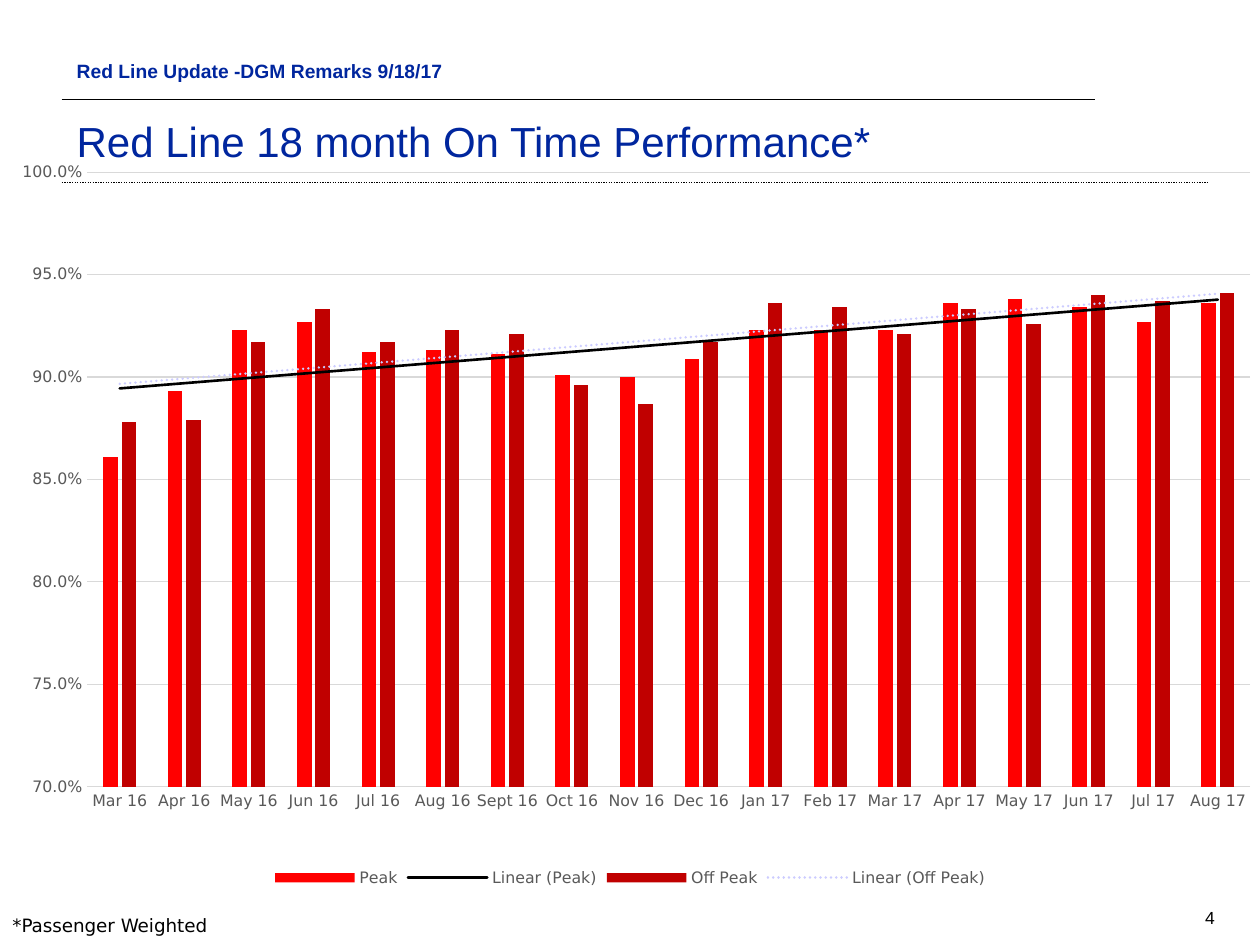
from lxml import etree
from pptx import Presentation
from pptx.chart.data import CategoryChartData
from pptx.dml.color import RGBColor
from pptx.enum import chart as ch, dml, shapes, text
from pptx.oxml import parse_xml
from pptx.oxml.ns import nsdecls, qn
from pptx.util import Inches, Pt

BLACK = RGBColor(0x00, 0x00, 0x00)
NAVY = RGBColor(0x00, 0x26, 0x9E)
GRAY = RGBColor(0x59, 0x59, 0x59)
GRID = RGBColor(0xD9, 0xD9, 0xD9)
RED = RGBColor(0xFF, 0x00, 0x00)
DARK_RED = RGBColor(0xC0, 0x00, 0x00)
LAVENDER = RGBColor(0xCC, 0xCC, 0xFF)

MONTHS = ["Mar 16", "Apr 16", "May 16", "Jun 16", "Jul 16", "Aug 16",
          "Sept 16", "Oct 16", "Nov 16", "Dec 16", "Jan 17", "Feb 17",
          "Mar 17", "Apr 17", "May 17", "Jun 17", "Jul 17", "Aug 17"]
PEAK = [0.861, 0.893, 0.923, 0.927, 0.912, 0.913, 0.911, 0.901, 0.9,
        0.909, 0.923, 0.923, 0.923, 0.936, 0.938, 0.934, 0.927, 0.936]
OFF_PEAK = [0.878, 0.879, 0.917, 0.933, 0.917, 0.923, 0.921, 0.896, 0.887,
            0.917, 0.936, 0.934, 0.921, 0.933, 0.926, 0.94, 0.937, 0.941]
# name, values, bar colour, trend colour, trend dash
SERIES = [("Peak", PEAK, RED, BLACK, "solid"),
          ("Off Peak", OFF_PEAK, DARK_RED, LAVENDER, "sysDot")]


def set_font(font, size, color, name="DejaVu Sans", bold=False):
    font.size, font.name, font.bold = Pt(size), name, bold
    font.color.rgb = color


def add_text(page, box, words, size, color, name="Arial", bold=False,
             align=text.PP_ALIGN.LEFT, anchor=text.MSO_ANCHOR.TOP):
    frame = page.shapes.add_textbox(*map(Inches, box)).text_frame
    frame.word_wrap = True
    frame.vertical_anchor = anchor
    para = frame.paragraphs[0]
    para.text = words
    para.alignment = align
    set_font(para.font, size, color, name, bold)


def add_rule(page, left, right, top, width, dash=None):
    rule = page.shapes.add_connector(
        shapes.MSO_CONNECTOR.STRAIGHT,
        Inches(left), Inches(top), Inches(right), Inches(top))
    rule.line.color.rgb = BLACK
    rule.line.width = Pt(width)
    if dash:
        rule.line.dash_style = dash
    etree.SubElement(rule._element.spPr, qn("a:effectLst"))


def add_trend(series, color, dash):
    trend = parse_xml(
        f'<c:trendline {nsdecls("c", "a")}><c:spPr><a:ln w="{Pt(1.5)}" cap="rnd">'
        f'<a:solidFill><a:srgbClr val="{color}"/></a:solidFill>'
        f'<a:prstDash val="{dash}"/></a:ln></c:spPr>'
        '<c:trendlineType val="linear"/><c:dispRSqr val="0"/>'
        '<c:dispEq val="0"/></c:trendline>')
    series._element.find(qn("c:cat")).addprevious(trend)


def set_plot_area(chart, left, top, width, height):
    """Fix the inner plot area, in fractions of the chart."""
    area = chart._chartSpace.chart.plotArea
    for old in area.findall(qn("c:layout")):
        area.remove(old)
    sizes = "".join(f'<c:{tag} val="{value}"/>' for tag, value in
                    zip("xywh", (left, top, width, height)))
    area.insert(0, parse_xml(
        f'<c:layout {nsdecls("c")}><c:manualLayout><c:layoutTarget val="inner"/>'
        '<c:xMode val="edge"/><c:yMode val="edge"/>'
        f'{sizes}</c:manualLayout></c:layout>'))


def style_axes(chart):
    months, rate = chart.category_axis, chart.value_axis
    for axis in (months, rate):
        axis.major_tick_mark = axis.minor_tick_mark = ch.XL_TICK_MARK.NONE
        set_font(axis.tick_labels.font, 9, GRAY)
    rate.minimum_scale, rate.maximum_scale, rate.major_unit = 0.7, 1, 0.05
    rate.tick_labels.number_format = "0.0%"
    rate.tick_labels.number_format_is_linked = False
    rate.format.line.fill.background()
    for line in (months.format.line, rate.major_gridlines.format.line):
        line.color.rgb = GRID
        line.width = Pt(0.75)


def add_performance_chart(page, box):
    data = CategoryChartData(number_format="0.0%")
    data.categories = MONTHS
    for name, values, *_ in SERIES:
        data.add_series(name, values)
    chart = page.shapes.add_chart(
        ch.XL_CHART_TYPE.COLUMN_CLUSTERED, *map(Inches, box), data).chart
    chart.has_title = False
    set_font(chart.font, 10, BLACK)

    plot = chart.plots[0]
    plot.vary_by_categories = False
    plot.gap_width, plot.overlap = 219, -27
    for series, (_, _, color, trend_color, dash) in zip(plot.series, SERIES):
        series.format.fill.solid()
        series.format.fill.fore_color.rgb = color
        add_trend(series, trend_color, dash)

    style_axes(chart)
    set_plot_area(chart, 0.102, 0.015, 0.853, 0.841)
    chart.has_legend = True
    chart.legend.position = ch.XL_LEGEND_POSITION.BOTTOM
    chart.legend.include_in_layout = False
    set_font(chart.legend.font, 9, GRAY)


def add_header(page, left, top):
    add_rule(page, left, left + 8.2, top + 0.37, 1)
    add_rule(page, left, left + 9.1, top + 1.03, 0.75,
             dml.MSO_LINE.ROUND_DOT)
    add_text(page, (left + 0.02, top, 7.99, 0.25),
             "Red Line Update -DGM Remarks 9/18/17", 11, NAVY, bold=True)
    add_text(page, (left + 0.02, top + 0.44, 8.48, 0.51),
             "Red Line 18 month On Time Performance*", 24, NAVY,
             anchor=text.MSO_ANCHOR.BOTTOM)


def add_footer(page, top):
    add_text(page, (8.91, top, 0.83, 0.25), "4", 10, BLACK,
             align=text.PP_ALIGN.RIGHT, anchor=text.MSO_ANCHOR.MIDDLE)
    add_text(page, (0, top + 0.05, 2.58, 0.29), "*Passenger Weighted",
             10.5, BLACK, name="DejaVu Sans")


def main():
    deck = Presentation()
    deck.slide_width, deck.slide_height = Inches(10), Inches(7.5)
    page = deck.slides.add_slide(deck.slide_layouts[6])
    add_header(page, 0.49, 0.42)
    add_footer(page, 7.16)
    add_performance_chart(page, (-0.41, 1.28, 10.82, 5.8))
    deck.save("out.pptx")


if __name__ == "__main__":
    main()
